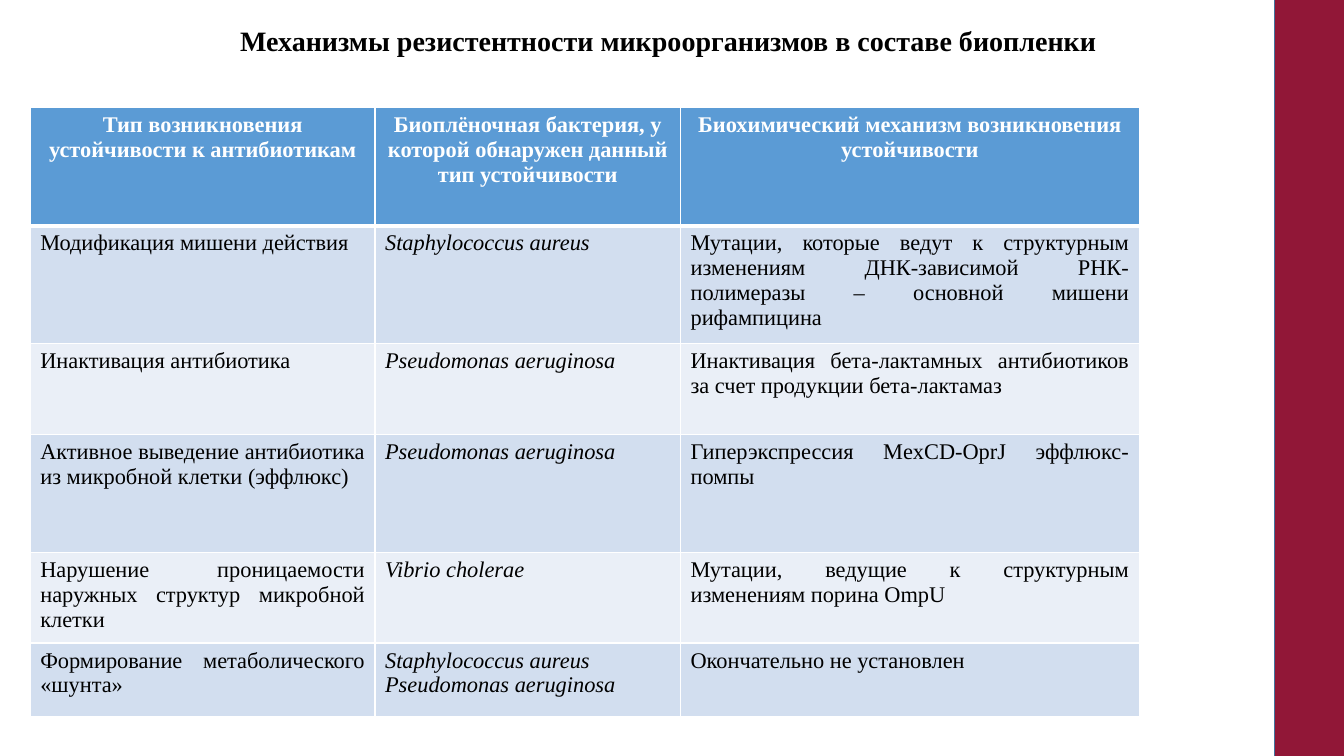
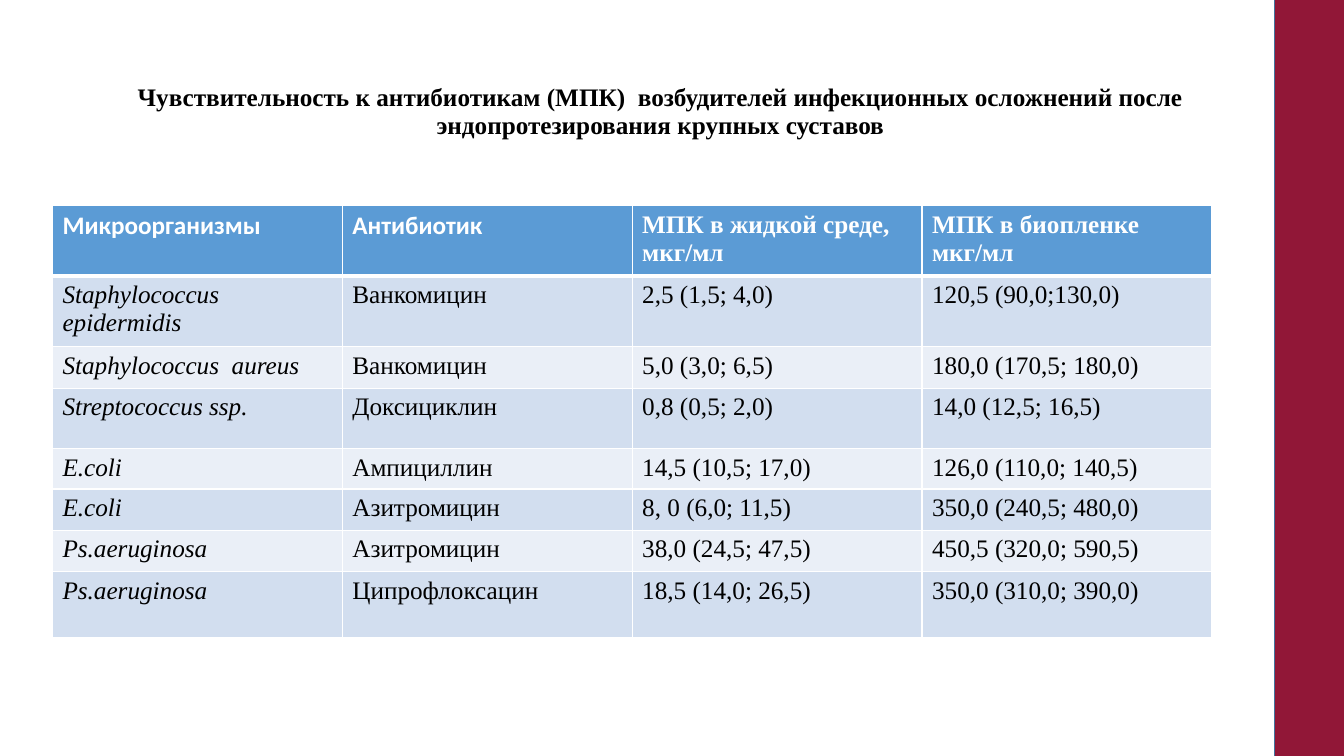
import pptx
import pptx.dml.color
import pptx.enum.shapes
import pptx.enum.text
import pptx.oxml
import pptx.oxml.ns
import pptx.util

Inches = pptx.util.Inches
Pt = pptx.util.Pt
ALIGN = pptx.enum.text.PP_ALIGN
SERIF = "Times New Roman"
SANS = "Calibri"
COLORS = {
    "text": "000000",
    "white": "FFFFFF",
    "header": "5B9BD5",
    "band_dark": "D2DEEF",
    "band_light": "EAEFF7",
    "stripe": "911737",
    "stripe_line": "43739E",
}

MECHANISMS = [
    ["Тип возникновения устойчивости к антибиотикам",
     "Биоплёночная бактерия, у которой обнаружен данный тип устойчивости",
     "Биохимический механизм возникновения устойчивости"],
    ["Модификация мишени действия", "Staphylococcus aureus",
     "Мутации, которые ведут к структурным изменениям ДНК-зависимой "
     "РНК-полимеразы – основной мишени рифампицина"],
    ["Инактивация антибиотика", "Pseudomonas aeruginosa",
     "Инактивация бета-лактамных антибиотиков за счет продукции бета-лактамаз"],
    ["Активное выведение антибиотика из микробной клетки (эффлюкс)",
     "Pseudomonas aeruginosa", "Гиперэкспрессия MexCD-OprJ эффлюкс-помпы"],
    ["Нарушение проницаемости наружных структур микробной клетки",
     "Vibrio cholerae", "Мутации, ведущие к структурным изменениям порина OmpU"],
    ["Формирование метаболического «шунта»",
     "Staphylococcus aureus\nPseudomonas aeruginosa", "Окончательно не установлен"],
]

SENSITIVITY = [
    ["Микроорганизмы", "Антибиотик", "МПК в жидкой среде, мкг/мл", "МПК в биопленке мкг/мл"],
    ["Staphylococcus epidermidis", "Ванкомицин", "2,5 (1,5; 4,0)", "120,5 (90,0;130,0)"],
    ["Staphylococcus  aureus", "Ванкомицин", "5,0 (3,0; 6,5)", "180,0 (170,5; 180,0)"],
    ["Streptococcus ssp.", "Доксициклин", "0,8 (0,5; 2,0)", "14,0 (12,5; 16,5)"],
    ["E.coli", "Ампициллин", "14,5 (10,5; 17,0)", "126,0 (110,0; 140,5)"],
    ["E.coli", "Азитромицин", "8, 0 (6,0; 11,5)", "350,0 (240,5; 480,0)"],
    ["Ps.aeruginosa", "Азитромицин", "38,0 (24,5; 47,5)", "450,5 (320,0; 590,5)"],
    ["Ps.aeruginosa", "Ципрофлоксацин", "18,5 (14,0; 26,5)", "350,0 (310,0; 390,0)"],
]


def rgb(name):
    return pptx.dml.color.RGBColor.from_string(COLORS[name])


def set_font(p, size, color, bold=False, italic=False, name=SERIF):
    p.font.name = name
    p.font.size = Pt(size)
    p.font.bold = bold
    p.font.italic = italic
    p.font.color.rgb = rgb(color)


def add_title(s, text, box, size):
    tf = s.shapes.add_textbox(*map(Inches, box)).text_frame
    tf.word_wrap = True
    tf.vertical_anchor = pptx.enum.text.MSO_ANCHOR.MIDDLE
    p = tf.paragraphs[0]
    p.text = text
    p.alignment = ALIGN.CENTER
    p.line_spacing = 0.9
    set_font(p, size, "text", bold=True)


def add_stripe(s):
    sp = s.shapes.add_shape(pptx.enum.shapes.MSO_SHAPE.RECTANGLE,
                            Inches(12.64), Inches(-0.08), Inches(0.82), Inches(7.65))
    sp.shadow.inherit = False
    sp.fill.solid()
    sp.fill.fore_color.rgb = rgb("stripe")
    sp.line.color.rgb = rgb("stripe_line")
    sp.line.width = Pt(1)


def set_borders(cell, top, bottom):
    tcPr = cell._tc.get_or_add_tcPr()
    for side, width in (("L", 1), ("R", 1), ("T", top), ("B", bottom)):
        tcPr.append(pptx.oxml.parse_xml(
            f'<a:ln{side} {pptx.oxml.ns.nsdecls("a")} w="{Pt(width)}"><a:solidFill>'
            f'<a:srgbClr val="{COLORS["white"]}"/></a:solidFill></a:ln{side}>'))


def add_table(s, rows, left, top, widths, heights, size, italic_col,
              header_align=ALIGN.LEFT, body_align=ALIGN.LEFT, sans_headers=()):
    table = s.shapes.add_table(len(rows), len(widths), Inches(left), Inches(top),
                               Inches(sum(widths)), Inches(sum(heights))).table
    for col, width in zip(table.columns, widths):
        col.width = Inches(width)
    for i, (values, height) in enumerate(zip(rows, heights)):
        table.rows[i].height = Inches(height)
        header = i == 0
        fill = "header" if header else ("band_light", "band_dark")[i % 2]
        for j, text in enumerate(values):
            cell = table.cell(i, j)
            set_borders(cell, 3 if i == 1 else 1, 3 if header else 1)
            cell.fill.solid()
            cell.fill.fore_color.rgb = rgb(fill)
            cell.text_frame.text = text
            italic = not header and j == italic_col
            align = header_align if header else ALIGN.LEFT if italic else body_align
            name = SANS if header and j in sans_headers else SERIF
            for p in cell.text_frame.paragraphs:
                p.alignment = align
                set_font(p, size, "white" if header else "text", header, italic, name)


def add_slide(prs, title, title_box, title_size, **table):
    s = prs.slides.add_slide(prs.slide_layouts[6])
    add_title(s, title, title_box, title_size)
    add_table(s, **table)
    add_stripe(s)


def main():
    prs = pptx.Presentation()
    prs.slide_width = Inches(13.33)
    prs.slide_height = Inches(7.5)
    add_slide(prs, "Механизмы резистентности микроорганизмов в составе биопленки",
              (0.26, 0, 12.74, 0.85), 20,
              rows=MECHANISMS, left=0.3, top=1.07, widths=[3.42, 3.03, 4.55],
              heights=[1.17, 1.17, 0.9, 1.17, 0.9, 0.73], size=16, italic_col=1,
              header_align=ALIGN.CENTER, body_align=ALIGN.JUSTIFY)
    add_slide(prs, "Чувствительность к антибиотикам (МПК)  возбудителей инфекционных "
              "осложнений после эндопротезирования крупных суставов",
              (0.8, 0.39, 11.5, 1.45), 18,
              rows=SENSITIVITY, left=0.52, top=2.04, widths=[11.5 / 4] * 4,
              heights=[0.65, 0.65, 0.41, 0.6, 0.38, 0.41, 0.41, 0.65], size=18,
              italic_col=0, sans_headers=(0, 1))
    prs.save("out.pptx")


if __name__ == "__main__":
    main()
